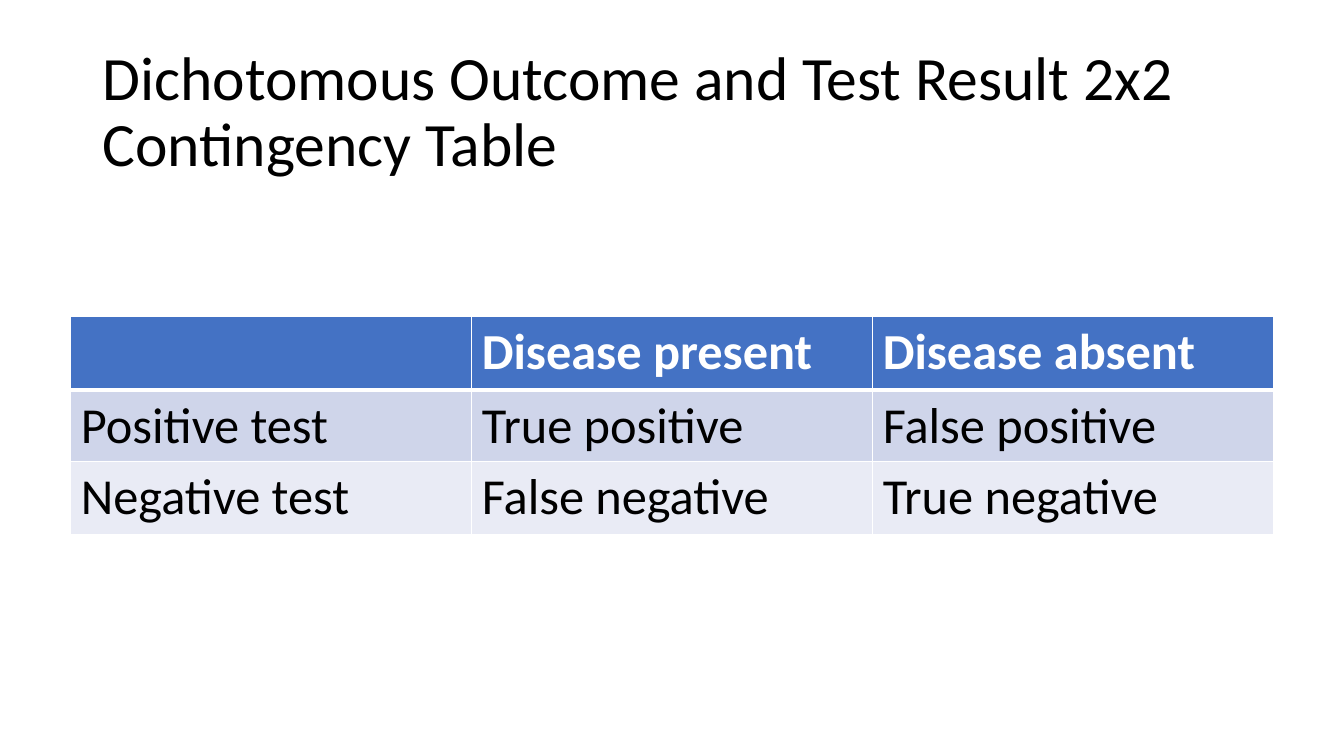
from lxml.etree import SubElement
from pptx import Presentation
from pptx.dml.color import RGBColor
from pptx.enum.text import MSO_ANCHOR
from pptx.oxml.ns import qn
from pptx.util import Pt

# Content
TITLE = "Dichotomous Outcome and Test Result 2x2 Contingency Table"
ROWS = [
    ("", "Disease present", "Disease absent"),
    ("Positive test", "True positive", "False positive"),
    ("Negative test", "False negative", "True negative"),
]

THEME = {
    "font": "Calibri",
    "title_size": 44,
    "table_size": 36,
    "text": "000000",
    "header_text": "FFFFFF",
    "border": "FFFFFF",
    "row_fills": ["4472C4", "CFD5EA", "E9EBF5"],
}

# Layout in points
SLIDE_SIZE = (960, 540)
TITLE_BOX = (66, 28.8, 828, 104.4)
TABLE_LEFT, TABLE_TOP = 50.6, 226.3
COLUMN_WIDTH = 286.4
ROW_HEIGHTS = [52.4, 51.1, 52.4]
THIN, THICK = 1, 3


def style(paragraph, size, color, bold=False):
    font = paragraph.font
    font.name = THEME["font"]
    font.size = Pt(size)
    font.bold = bold
    font.color.rgb = RGBColor.from_string(color)


def add_borders(cell, top, bottom):
    properties = cell._tc.get_or_add_tcPr()
    for side, width in (("L", THIN), ("R", THIN), ("T", top), ("B", bottom)):
        line = SubElement(properties, qn(f"a:ln{side}"), w=str(Pt(width)))
        fill = SubElement(line, qn("a:solidFill"))
        SubElement(fill, qn("a:srgbClr"), val=THEME["border"])


def add_title(slide):
    box = slide.shapes.add_textbox(*map(Pt, TITLE_BOX))
    frame = box.text_frame
    frame.word_wrap = True
    frame.vertical_anchor = MSO_ANCHOR.MIDDLE
    paragraph = frame.paragraphs[0]
    paragraph.text = TITLE
    paragraph.line_spacing = 0.9
    style(paragraph, THEME["title_size"], THEME["text"])


def add_contingency_table(slide):
    column_count = len(ROWS[0])
    table = slide.shapes.add_table(
        len(ROWS), column_count, Pt(TABLE_LEFT), Pt(TABLE_TOP),
        Pt(COLUMN_WIDTH * column_count), Pt(sum(ROW_HEIGHTS)),
    ).table
    for column in table.columns:
        column.width = Pt(COLUMN_WIDTH)
    for row_index, labels in enumerate(ROWS):
        table.rows[row_index].height = Pt(ROW_HEIGHTS[row_index])
        header = row_index == 0
        for column_index, label in enumerate(labels):
            cell = table.cell(row_index, column_index)
            # The rule under the header is thicker than the others
            add_borders(cell, THICK if row_index == 1 else THIN, THICK if header else THIN)
            cell.fill.solid()
            cell.fill.fore_color.rgb = RGBColor.from_string(THEME["row_fills"][row_index])
            paragraph = cell.text_frame.paragraphs[0]
            if label:
                paragraph.text = label
            color = THEME["header_text" if header else "text"]
            style(paragraph, THEME["table_size"], color, bold=header)


def main():
    presentation = Presentation()
    presentation.slide_width, presentation.slide_height = map(Pt, SLIDE_SIZE)
    slide = presentation.slides.add_slide(presentation.slide_layouts[6])
    add_title(slide)
    add_contingency_table(slide)
    presentation.save("out.pptx")


if __name__ == "__main__":
    main()
